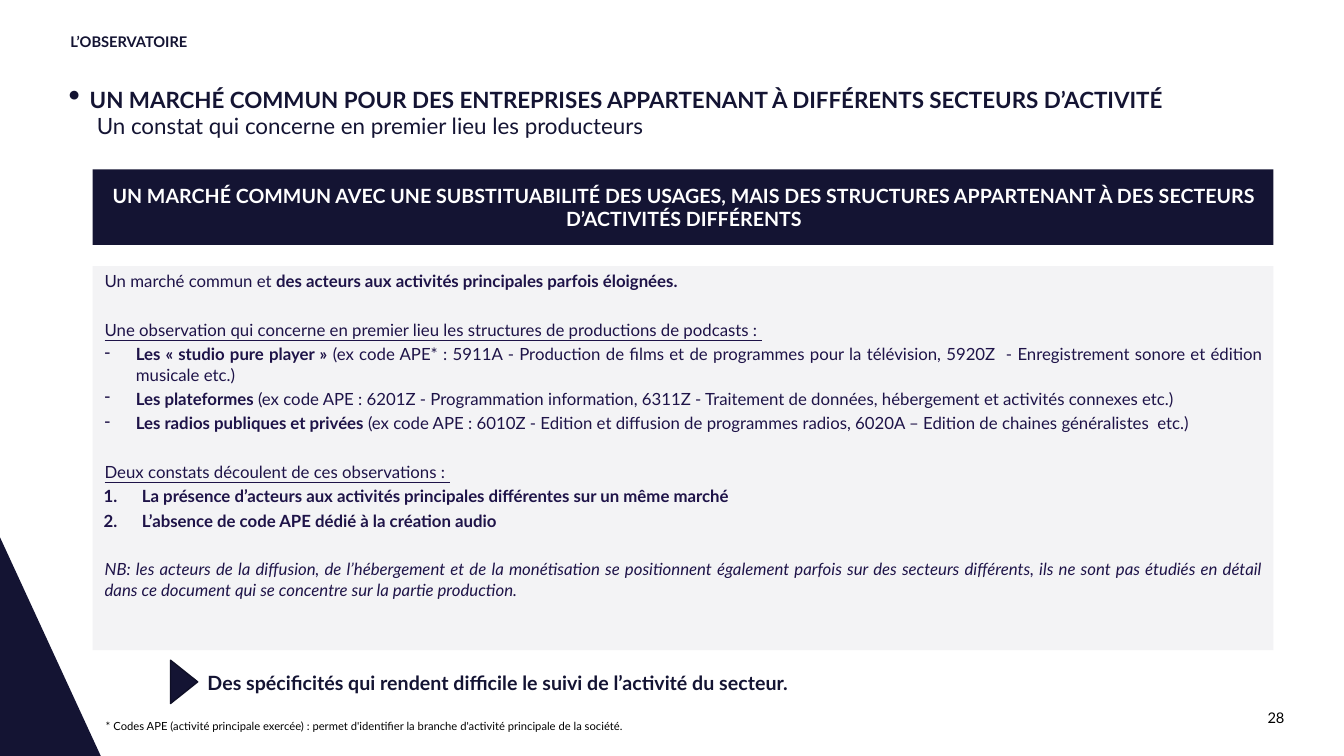
"""Build the slide on podcast companies that share one market across sectors."""
from dataclasses import dataclass

import pptx
import pptx.util
import pptx.dml.color
import pptx.enum.shapes
import pptx.enum.text
import pptx.oxml.ns
import lxml.etree

Pt, Inches = pptx.util.Pt, pptx.util.Inches
ALIGN = pptx.enum.text.PP_ALIGN
ANCHOR = pptx.enum.text.MSO_ANCHOR
SHAPE = pptx.enum.shapes.MSO_SHAPE
WIDTH, HEIGHT = Inches(13.33), Inches(7.5)
COLUMN, ROW = WIDTH / 100, HEIGHT / 100


@dataclass(frozen=True)
class Theme:
    """Font, colours and type sizes of the slide."""

    font: str = "Lato"
    navy: str = "141433"
    outline: str = "0F0F26"
    indigo: str = "1E1348"
    panel: str = "F3F3F5"
    white: str = "FFFFFF"
    black: str = "000000"
    heading: float = 16
    banner: float = 14
    body: float = 12
    label: float = 10.5
    note: float = 8


THEME = Theme()
PLAIN, BOLD, ITALIC, UNDERLINE = {}, {"bold": True}, {"italic": True}, {"underline": True}
JUSTIFIED = {"alignment": ALIGN.JUSTIFY}
CLOSE = JUSTIFIED | {"space_before": Pt(3)}
APART = JUSTIFIED | {"space_before": Pt(20.4)}
DASH = {"left": 0.33, "hanging": 0.31, "marks": [("buChar", {"char": "-"})]}
NUMBER = {"left": 0.39, "hanging": 0.38, "marks": [("buAutoNum", {"type": "arabicPeriod"})]}
DOT = {"left": 0.21, "hanging": 0.21,
       "marks": [("buSzPct", {"val": "150000"}), ("buChar", {"char": "•"})]}
FLUSH = {"left": 0.02}

ANALYSIS = [
    (JUSTIFIED, FLUSH, [("Un marché commun et ", PLAIN),
                        ("des acteurs aux activités principales parfois éloignées. ", BOLD)]),
    (APART, FLUSH, [("Une observation qui concerne en premier lieu les structures de "
                     "productions de podcasts : ", UNDERLINE)]),
    (CLOSE, DASH, [("Les « studio pure player » ", BOLD),
                   ("(ex code APE* : 5911A - Production de films et de programmes pour la "
                    "télévision, 5920Z  - Enregistrement sonore et édition musicale etc.)", PLAIN)]),
    (CLOSE, DASH, [("Les plateformes ", BOLD),
                   ("(ex code APE : 6201Z - Programmation information, 6311Z - Traitement de "
                    "données, hébergement et activités connexes etc.)", PLAIN)]),
    (CLOSE, DASH, [("Les radios publiques et privées ", BOLD),
                   ("(ex code APE : 6010Z - Edition et diffusion de programmes radios, 6020A – "
                    "Edition de chaines généralistes  etc.)", PLAIN)]),
    (APART, FLUSH, [("Deux constats découlent de ces observations : ", UNDERLINE)]),
    (CLOSE, NUMBER, [("La présence d’acteurs aux activités principales différentes sur un "
                      "même marché", BOLD)]),
    (CLOSE, NUMBER, [("L’absence de code APE dédié à la création audio ", BOLD)]),
    (APART, FLUSH, [("NB: les acteurs de la diffusion, de l’hébergement et de la monétisation se "
                     "positionnent également parfois sur des secteurs différents, ils ne sont pas "
                     "étudiés en détail dans ce document qui se concentre sur la partie "
                     "production.", ITALIC)]),
]
HEADING = [
    ({}, DOT, [("UN MARCHÉ COMMUN POUR DES ENTREPRISES APPARTENANT À DIFFÉRENTS SECTEURS "
                "D’ACTIVITÉ", BOLD)]),
    ({}, {"left": 0.28}, [("Un constat qui concerne en premier lieu les producteurs", PLAIN)]),
]
BANNER = [({"alignment": ALIGN.CENTER}, FLUSH,
           [("UN MARCHÉ COMMUN AVEC UNE SUBSTITUABILITÉ DES USAGES, MAIS DES STRUCTURES "
             "APPARTENANT À DES SECTEURS D’ACTIVITÉS DIFFÉRENTS", BOLD)])]
CONCLUSION = [(JUSTIFIED, {}, [("Des spécificités qui rendent difficile le suivi de l’activité "
                                "du secteur.", BOLD)])]
FOOTNOTE = [({}, {}, [("* Codes APE (activité principale exercée) : permet d'identifier la "
                       "branche d'activité principale de la société.", PLAIN)])]
SECTION = [({"line_spacing": 0.9}, {}, [("L’OBSERVATOIRE", BOLD)])]
PAGE = [({"alignment": ALIGN.RIGHT}, {}, [("28", PLAIN)])]


def rgb(value):
    """Return a colour from its hexadecimal code."""
    return pptx.dml.color.RGBColor.from_string(value)


def apply(target, formats):
    """Set every attribute named in formats on target."""
    for name, value in formats.items():
        setattr(target, name, value)


def place(columns, rows, across, down):
    """Turn grid columns and rows into a position and a size."""
    return [round(n) for n in (columns * COLUMN, rows * ROW, across * COLUMN, down * ROW)]


def indent(paragraph, left=0, hanging=0, marks=()):
    """Indent a paragraph and give it its list mark."""
    properties = paragraph._p.get_or_add_pPr()
    properties.set("marL", str(Inches(left)))
    properties.set("indent", str(-Inches(hanging)))
    for tag, attributes in marks:
        lxml.etree.SubElement(properties, pptx.oxml.ns.qn(f"a:{tag}"), attributes)


def write(shape, paragraphs, size, colour, anchor=ANCHOR.MIDDLE, insets=(0.1, 0.05, 0.1, 0.05)):
    """Write formatted paragraphs into a shape."""
    frame = shape.text_frame
    sides = ("margin_left", "margin_top", "margin_right", "margin_bottom")
    apply(frame, {"word_wrap": True, "vertical_anchor": anchor}
          | dict(zip(sides, map(Inches, insets))))
    for index, (layout, listing, runs) in enumerate(paragraphs):
        paragraph = frame.add_paragraph() if index else frame.paragraphs[0]
        apply(paragraph, {"alignment": ALIGN.LEFT} | layout)
        indent(paragraph, **listing)
        for text, style in runs:
            run = paragraph.add_run()
            run.text = text
            apply(run.font, {"name": THEME.font, "size": Pt(size), "bold": False} | style)
            run.font.color.rgb = rgb(colour)


def paint(shape, fill, outline=None):
    """Give a shape a flat fill and an optional outline."""
    shape.shadow.inherit = False
    shape.fill.solid()
    shape.fill.fore_color.rgb = rgb(fill)
    if outline:
        shape.line.color.rgb = rgb(outline)
        shape.line.width = Pt(1)
    else:
        shape.line.fill.background()


def add_text(slide, area, paragraphs, size, colour, **options):
    """Add a text box on the grid."""
    write(slide.shapes.add_textbox(*place(*area)), paragraphs, size, colour, **options)


def add_block(slide, area, fill, paragraphs, size, colour, **options):
    """Add a filled rectangle that holds text."""
    block = slide.shapes.add_shape(SHAPE.RECTANGLE, *place(*area))
    paint(block, fill)
    write(block, paragraphs, size, colour, **options)


def add_corner(slide, across, top):
    """Add the dark wedge in the lower left corner."""
    right, peak = round(across * COLUMN), round(top * ROW)
    outline = slide.shapes.build_freeform(0, HEIGHT)
    outline.add_line_segments([(right, HEIGHT), (0, peak)], close=True)
    paint(outline.convert_to_shape(), THEME.navy)


def add_pointer(slide, area):
    """Add the triangle that points to the conclusion."""
    pointer = slide.shapes.add_shape(SHAPE.ISOSCELES_TRIANGLE, *place(*area))
    pointer.rotation = 90
    paint(pointer, THEME.navy, THEME.outline)


def main():
    """Build and save the slide."""
    deck = pptx.Presentation()
    apply(deck, {"slide_width": WIDTH, "slide_height": HEIGHT})
    slide = deck.slides.add_slide(deck.slide_layouts[6])
    add_corner(slide, 7.5, 71.07)
    add_text(slide, (73.07, 93.73, 22.5, 2.4), PAGE, THEME.label, THEME.black,
             insets=(0, 0, 0, 0))
    add_text(slide, (4.5, 10.67, 94.22, 8.53), HEADING, THEME.heading, THEME.navy,
             anchor=ANCHOR.TOP, insets=(0.08, 0.05, 0.1, 0.05))
    add_text(slide, (4.5, 4.53, 44.33, 2.13), SECTION, THEME.label, THEME.navy,
             insets=(0.1, 0, 0.1, 0))
    add_block(slide, (6.9, 35.2, 87.85, 50.8), THEME.panel, ANALYSIS, THEME.body,
              THEME.indigo, anchor=ANCHOR.TOP)
    add_block(slide, (6.9, 22.4, 87.85, 10), THEME.navy, BANNER, THEME.banner, THEME.white)
    add_text(slide, (7.13, 94, 83.12, 4.13), FOOTNOTE, THEME.note, THEME.black)
    add_text(slide, (14.7, 86.8, 80.12, 7.07), CONCLUSION, THEME.banner, THEME.navy)
    add_pointer(slide, (12.08, 88.4, 3.23, 3.6))
    deck.save("out.pptx")


if __name__ == "__main__":
    main()
